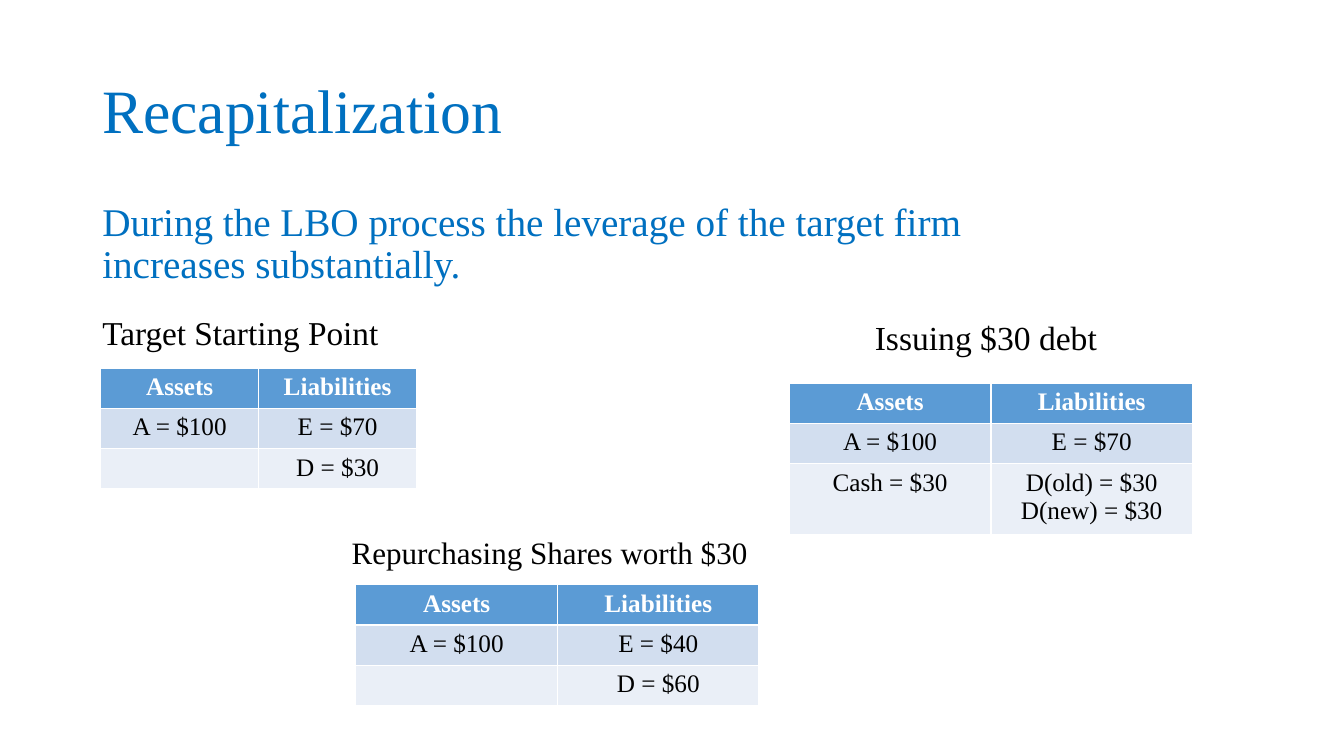
from pptx import Presentation
from pptx.dml.color import RGBColor
from pptx.enum.text import MSO_ANCHOR, PP_ALIGN
from pptx.util import Pt

TOP, MIDDLE = MSO_ANCHOR.TOP, MSO_ANCHOR.MIDDLE
CENTER = PP_ALIGN.CENTER
FONT = "Times New Roman"
ROW = 28.8
HEX = {"blue": "0070C0", "black": "000000", "white": "FFFFFF",
       "head": "5B9BD5", "band": "D2DEEF", "pale": "EAEFF7"}
RGB = {name: RGBColor.from_string(code) for name, code in HEX.items()}


def style(par, size, color, bold=False):
    for run in par.runs:
        run.font.name = FONT
        run.font.size = Pt(size)
        run.font.bold = bold
        run.font.color.rgb = RGB[color]


prs = Presentation()
prs.slide_width, prs.slide_height = Pt(960), Pt(540)
slide = prs.slides.add_slide(prs.slide_layouts[6])

# text, left, top, width, height, size, color, line spacing, space before, anchor
texts = [
    ("Recapitalization", 66, 28.75, 828, 104.4, 44, "blue", 0.9, 0, MIDDLE),
    ("During the LBO process the leverage of the target firm increases substantially.",
     66, 141.1, 690.5, 75.6, 28, "blue", 0.9, 10, TOP),
    ("Target Starting Point", 66, 216.7, 220.3, 46, 23.8, "black", 1.1, 10, TOP),
    ("Issuing $30 debt", 617.8, 216.7, 220.3, 46, 24, "black", 1.2, 10, TOP),
    ("Repurchasing Shares worth $30", 244.1, 375.1, 308.2, 38.2, 22.2, "black", 1.1, 10, TOP),
]
for text, left, top, width, height, size, color, lines, before, anchor in texts:
    box = slide.shapes.add_textbox(Pt(left), Pt(top), Pt(width), Pt(height))
    frame = box.text_frame
    frame.word_wrap = True
    frame.vertical_anchor = anchor
    frame.text = text
    par = frame.paragraphs[0]
    par.line_spacing = lines
    par.space_before = Pt(before)
    style(par, size, color)

# left, top, width, rows below the header
sheets = [
    (72, 262.8, 225.6, [("A = $100", "E = $70"), ("", "D = $30")]),
    (563.8, 273.6, 288, [("A = $100", "E = $70"),
                         ("Cash = $30", "D(old) = $30\nD(new) = $30")]),
    (254.2, 417.6, 288, [("A = $100", "E = $40"), ("", "D = $60")]),
]
fills = ["head", "band", "pale"]
for left, top, width, body in sheets:
    rows = [("Assets", "Liabilities")] + body
    table = slide.shapes.add_table(len(rows), 2, Pt(left), Pt(top),
                                   Pt(width), Pt(ROW * len(rows))).table
    for r, (row, fill) in enumerate(zip(rows, fills)):
        for c, text in enumerate(row):
            cell = table.cell(r, c)
            cell.fill.solid()
            cell.fill.fore_color.rgb = RGB[fill]
            cell.text_frame.text = text
            for par in cell.text_frame.paragraphs:
                par.alignment = CENTER
                style(par, 18, "black" if r else "white", bold=r == 0)

prs.save("out.pptx")
